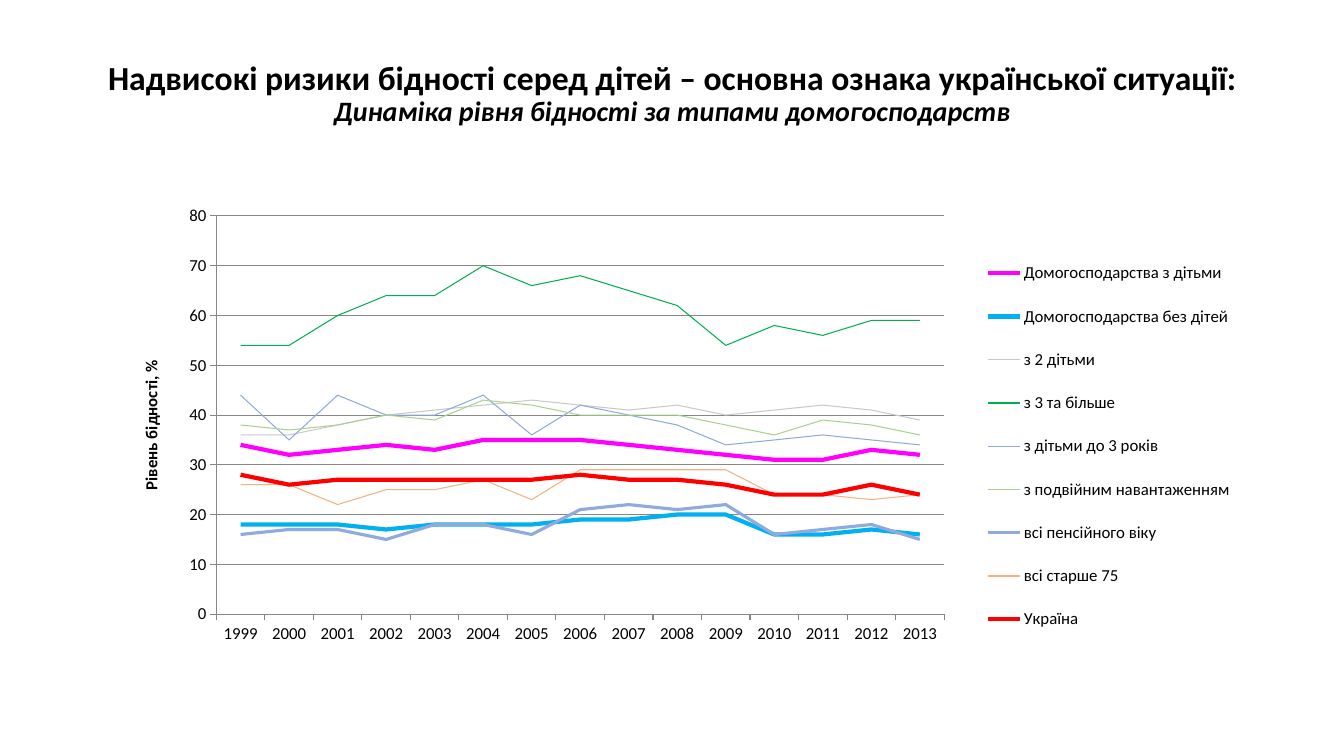
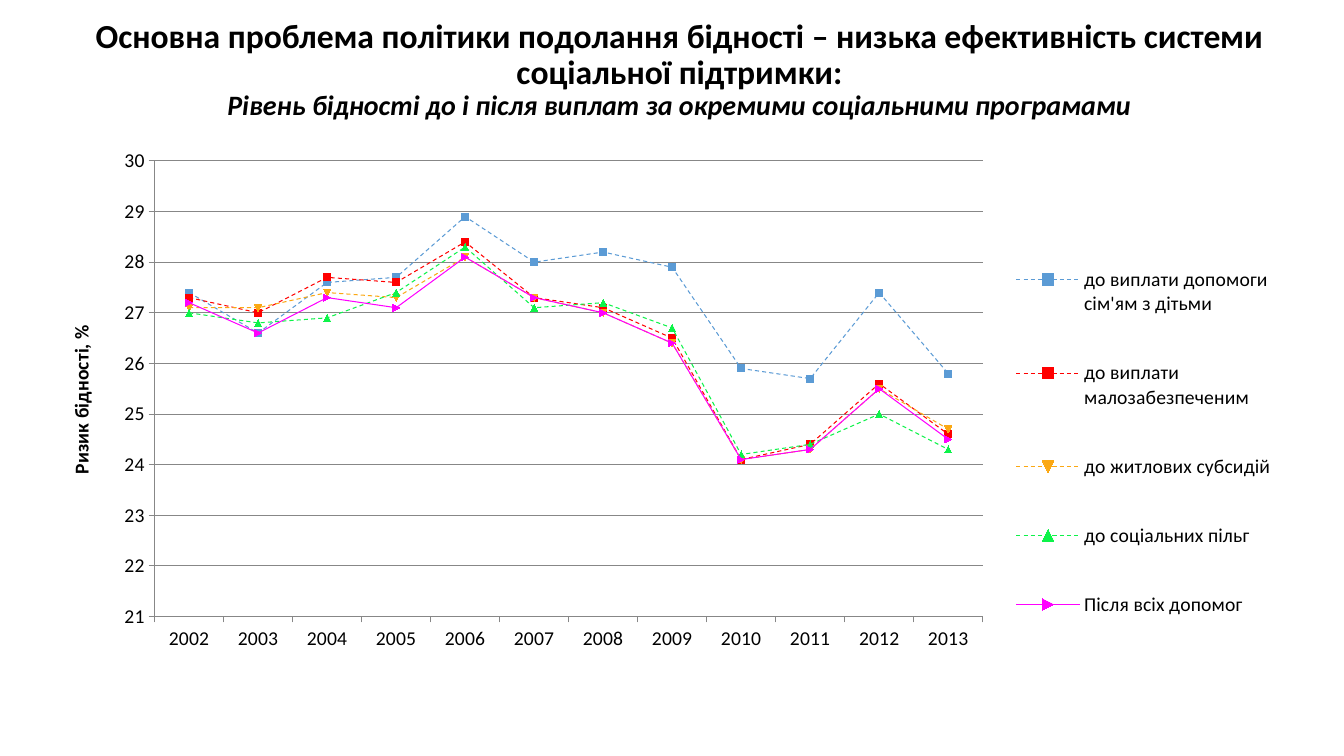
import dataclasses

import lxml.etree
import pptx
import pptx.chart.data
import pptx.dml.color
import pptx.enum.chart
import pptx.enum.dml
import pptx.enum.text
import pptx.oxml.ns
import pptx.util
from pptx.util import Inches, Pt


@dataclasses.dataclass(frozen=True)
class Theme:
    font: str = "Calibri"
    text: str = "000000"
    axis: str = "878787"
    heading: int = 24
    subheading: int = 20
    thin: float = 0.75
    medium: float = 2.25
    thick: float = 3
    marker: int = 5
    plot_left: float = 0.09
    plot_top: float = 0.03


theme = Theme()
rgb = pptx.dml.color.RGBColor.from_string
chart_types = pptx.enum.chart.XL_CHART_TYPE
markers = pptx.enum.chart.XL_MARKER_STYLE

slides = [
    {
        "heading": "Надвисокі ризики бідності серед дітей – основна ознака української ситуації:",
        "subheading": "Динаміка рівня бідності за типами домогосподарств",
        "title_box": (0.92, 0.4, 11.5, 1.08),
        "chart_box": (1.13, 2, 11.28, 4.76),
        "chart_type": chart_types.LINE,
        "plot_size": (0.64, 0.83),
        "legend_area": (0.76, 0.08, 0.23, 0.86),
        "chart_font": 10,
        "label_font": 12,
        "axis_title": "Рівень бідності, %",
        "scale": (0, 80, 10),
        "years": range(1999, 2014),
        "series": [
            ("Домогосподарства з дітьми", "FF00FF", theme.thick, False, None,
             "34 32 33 34 33 35 35 35 34 33 32 31 31 33 32"),
            ("Домогосподарства без дітей", "00B0F0", theme.thick, False, None,
             "18 18 18 17 18 18 18 19 19 20 20 16 16 17 16"),
            ("з 2 дітьми", "C9C9C9", theme.thin, False, None,
             "36 36 38 40 41 42 43 42 41 42 40 41 42 41 39"),
            ("з 3 та більше", "00B050", theme.thin, False, None,
             "54 54 60 64 64 70 66 68 65 62 54 58 56 59 59"),
            ("з дітьми до 3 років", "8FAADC", theme.thin, False, None,
             "44 35 44 40 40 44 36 42 40 38 34 35 36 35 34"),
            ("з подвійним навантаженням", "A9D18E", theme.thin, False, None,
             "38 37 38 40 39 43 42 40 40 40 38 36 39 38 36"),
            ("всі пенсійного віку", "8FAADC", theme.medium, False, None,
             "16 17 17 15 18 18 16 21 22 21 22 16 17 18 15"),
            ("всі старше 75", "F4B183", theme.thin, False, None,
             "26 26 22 25 25 27 23 29 29 29 29 24 24 23 24"),
            ("Україна", "FF0000", theme.thick, False, None,
             "28 26 27 27 27 27 27 28 27 27 26 24 24 26 24"),
        ],
    },
    {
        "heading": "Основна проблема політики подолання бідності – низька ефективність системи "
                   "соціальної підтримки:",
        "subheading": "Рівень бідності до і після виплат за окремими соціальними програмами",
        "title_box": (0.67, 0.15, 12.14, 1.1),
        "chart_box": (0.43, 1.43, 12.26, 5.58),
        "chart_type": chart_types.LINE_MARKERS,
        "plot_size": (0.67, 0.81),
        "legend_area": (0.78, 0.14, 0.22, 0.78),
        "chart_font": 11,
        "label_font": 14,
        "axis_title": "Ризик бідності, %",
        "scale": (21, 30, 1),
        "years": range(2002, 2014),
        "series": [
            ("до виплати допомоги сім'ям з дітьми", "5B9BD5", theme.thin, True, markers.AUTOMATIC,
             "27.4 26.6 27.6 27.7 28.9 28 28.2 27.9 25.9 25.7 27.4 25.8"),
            ("до виплати малозабезпеченим", "FF0000", theme.thin, True, markers.SQUARE,
             "27.3 27 27.7 27.6 28.4 27.3 27.1 26.5 24.1 24.4 25.6 24.6"),
            ("до житлових субсидій", "FBA813", theme.thin, True, markers.AUTOMATIC,
             "27.1 27.1 27.4 27.3 28.1 27.3 27 26.4 24.1 24.3 25.5 24.7"),
            ("до соціальних пільг", "0DF349", theme.thin, True, markers.AUTOMATIC,
             "27 26.8 26.9 27.4 28.3 27.1 27.2 26.7 24.2 24.4 25 24.3"),
            ("Після всіх допомог", "FF00FF", theme.thin, False, markers.AUTOMATIC,
             "27.2 26.6 27.3 27.1 28.1 27.3 27 26.4 24.1 24.3 25.5 24.5"),
        ],
    },
]


def style_font(font, size=None, bold=None):
    font.name = theme.font
    font.color.rgb = rgb(theme.text)
    font.bold = bold
    if size:
        font.size = Pt(size)


def place_inside_chart(part, area, index, inner=False):
    qn = pptx.oxml.ns.qn
    for old_layout in part.findall(qn("c:layout")):
        part.remove(old_layout)
    layout = lxml.etree.Element(qn("c:layout"))
    manual = lxml.etree.SubElement(layout, qn("c:manualLayout"))
    settings = [("layoutTarget", "inner")] if inner else []
    settings += [("xMode", "edge"), ("yMode", "edge"), *zip("xywh", area)]
    for tag, value in settings:
        lxml.etree.SubElement(manual, qn(f"c:{tag}"), val=str(value))
    part.insert(index, layout)


deck = pptx.Presentation()
deck.slide_width, deck.slide_height = Inches(13.33), Inches(7.5)

for content in slides:
    slide = deck.slides.add_slide(deck.slide_layouts[6])

    title = slide.shapes.add_textbox(*map(Inches, content["title_box"])).text_frame
    title.word_wrap = True
    title.vertical_anchor = pptx.enum.text.MSO_ANCHOR.MIDDLE
    title_lines = title.paragraphs[0]
    title_lines.alignment = pptx.enum.text.PP_ALIGN.CENTER
    title_lines.line_spacing = 0.9
    style_font(title_lines.font, bold=True)
    heading = title_lines.add_run()
    heading.text = content["heading"]
    heading.font.size = Pt(theme.heading)
    title_lines.add_line_break()
    subheading = title_lines.add_run()
    subheading.text = content["subheading"]
    subheading.font.size = Pt(theme.subheading)
    subheading.font.italic = True

    poverty = pptx.chart.data.CategoryChartData()
    poverty.categories = [str(year) for year in content["years"]]
    for name, *_, rates in content["series"]:
        poverty.add_series(name, [float(value) for value in rates.split()])
    chart = slide.shapes.add_chart(
        content["chart_type"], *map(Inches, content["chart_box"]), poverty).chart
    chart.has_title = False
    style_font(chart.font, content["chart_font"])
    chart.plots[0].vary_by_categories = False

    for line, (_, color, width, dashed, marker, _) in zip(chart.plots[0].series, content["series"]):
        line.smooth = False
        line.format.line.color.rgb = rgb(color)
        line.format.line.width = Pt(width)
        if dashed:
            line.format.line.dash_style = pptx.enum.dml.MSO_LINE.DASH
        if marker:
            line.marker.style = marker
            line.marker.size = theme.marker
            line.marker.format.fill.solid()
            line.marker.format.fill.fore_color.rgb = rgb(color)
            line.marker.format.line.color.rgb = rgb(color)

    years, rate = chart.category_axis, chart.value_axis
    for axis in (years, rate):
        axis.major_tick_mark = pptx.enum.chart.XL_TICK_MARK.OUTSIDE
        axis.format.line.color.rgb = rgb(theme.axis)
        style_font(axis.tick_labels.font, content["label_font"])
    rate.minimum_scale, rate.maximum_scale, rate.major_unit = content["scale"]
    rate.has_major_gridlines = True
    rate.major_gridlines.format.line.color.rgb = rgb(theme.axis)
    rate.tick_labels.number_format = "General"
    rate.tick_labels.number_format_is_linked = False
    rate_title = rate.axis_title.text_frame
    rate_title.text = content["axis_title"]
    style_font(rate_title.paragraphs[0].font, content["label_font"], bold=True)

    chart.has_legend = True
    chart.legend.position = pptx.enum.chart.XL_LEGEND_POSITION.RIGHT
    chart.legend.include_in_layout = False
    style_font(chart.legend.font, content["label_font"])
    plot_area = (theme.plot_left, theme.plot_top, *content["plot_size"])
    place_inside_chart(chart.element.xpath("c:chart/c:plotArea")[0], plot_area, 0, inner=True)
    place_inside_chart(chart.element.xpath("c:chart/c:legend")[0], content["legend_area"], 1)

deck.save("out.pptx")
